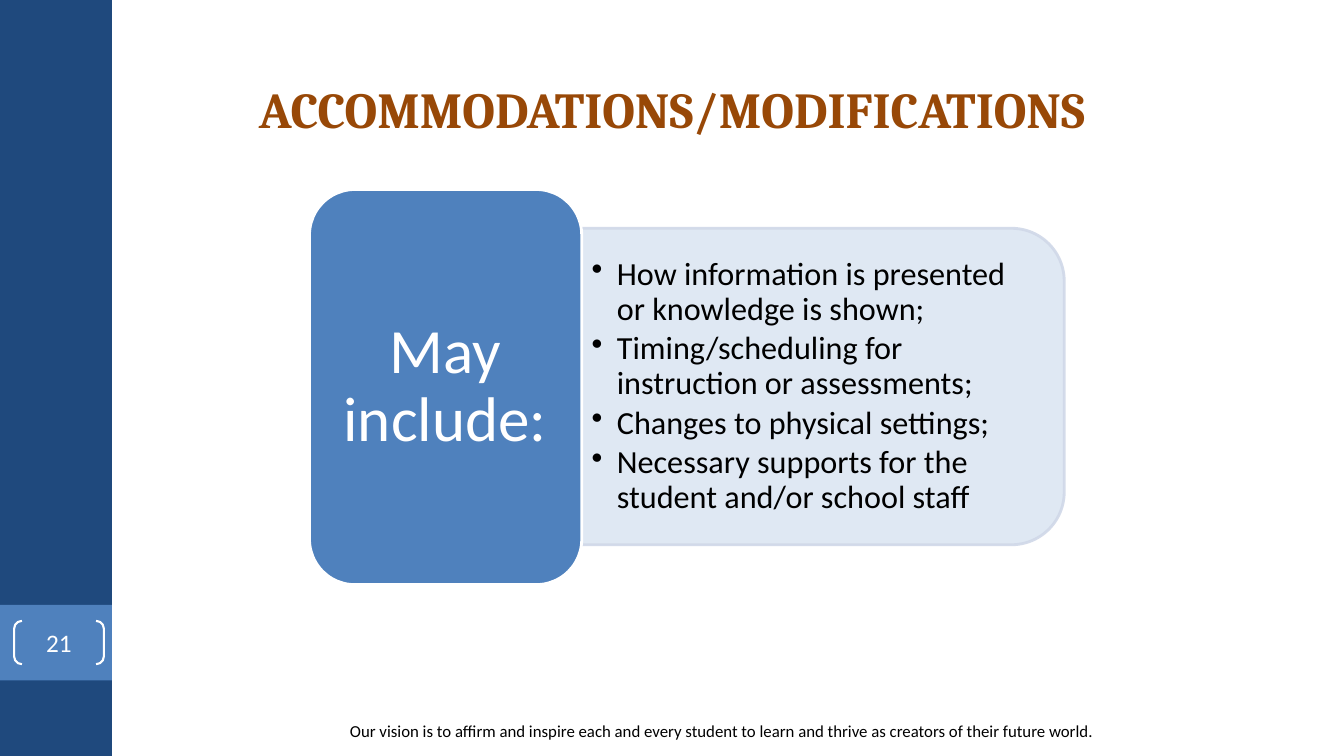
import pptx
import pptx.util
import pptx.dml.color
import pptx.enum.shapes
import pptx.enum.text
import pptx.oxml
import pptx.oxml.ns

RGB = pptx.dml.color.RGBColor
NAVY = RGB(0x1F, 0x49, 0x7D)
BLUE = RGB(0x4F, 0x81, 0xBD)
PALE = RGB(0xDC, 0xE6, 0xF2)
EDGE = RGB(0xD0, 0xD8, 0xE8)
RUST = RGB(0x98, 0x48, 0x07)
WHITE = RGB(0xFF, 0xFF, 0xFF)
BLACK = RGB(0x00, 0x00, 0x00)

KIND = pptx.enum.shapes.MSO_SHAPE
TOP = pptx.enum.text.MSO_ANCHOR.TOP
MID = pptx.enum.text.MSO_ANCHOR.MIDDLE
LEFT = pptx.enum.text.PP_ALIGN.LEFT
CENTER = pptx.enum.text.PP_ALIGN.CENTER
SCALE = 9144

ITEMS = [
    "How information is presented or knowledge is shown;",
    "Timing/scheduling for instruction or assessments;",
    "Changes to physical settings;",
    "Necessary supports for the student and/or school staff",
]


def px(num):
    return pptx.util.Emu(num * SCALE)


class Deck:
    font = "Calibri"
    head = "Cambria"

    def __init__(self):
        self.show = pptx.Presentation()
        self.show.slide_width = px(1333)
        self.show.slide_height = px(750)
        self.slide = self.show.slides.add_slide(self.show.slide_layouts[5])

    def title(self, text, box, size, color):
        shape = self.slide.shapes.title
        shape.left, shape.top, shape.width, shape.height = map(px, box)
        self.label(shape, [text], size, color, font=self.head, bold=True)

    def shape(self, kind, box, fill=None, line=None, width=2, turn=0, alpha=None):
        shape = self.slide.shapes.add_shape(kind, *map(px, box))
        shape.shadow.inherit = False
        shape.rotation = turn
        if fill is None:
            shape.fill.background()
        else:
            shape.fill.solid()
            shape.fill.fore_color.rgb = fill
        if line is None:
            shape.line.fill.background()
        else:
            shape.line.color.rgb = line
            shape.line.width = pptx.util.Pt(width)
        if alpha:
            for tint in shape.element.spPr.iter(pptx.oxml.ns.qn("a:srgbClr")):
                node = pptx.oxml.parse_xml(
                    f'<a:alpha {pptx.oxml.ns.nsdecls("a")} val="{alpha * 1000}"/>')
                tint.append(node)
        return shape

    def text(self, box, lines, size, color, **style):
        shape = self.slide.shapes.add_textbox(*map(px, box))
        self.label(shape, lines, size, color, **style)

    def label(self, shape, lines, size, color, font=None, bold=False,
              align=CENTER, anchor=TOP, pad=(10, 5), pack=1.0, gap=0, dot=False):
        frame = shape.text_frame
        frame.word_wrap = True
        frame.auto_size = pptx.enum.text.MSO_AUTO_SIZE.NONE
        frame.vertical_anchor = anchor
        frame.margin_left = frame.margin_right = px(pad[0])
        frame.margin_top = frame.margin_bottom = px(pad[1])
        frame.text = "\n".join(lines)
        for para in frame.paragraphs:
            para.alignment = align
            para.line_spacing = pack
            para.space_before = pptx.util.Pt(0)
            para.space_after = pptx.util.Pt(gap)
            if dot:
                self.bullet(para)
            for run in para.runs:
                run.font.name = font or self.font
                run.font.size = pptx.util.Pt(size)
                run.font.bold = bold
                run.font.color.rgb = color

    def bullet(self, para):
        props = para._p.get_or_add_pPr()
        props.set("marL", str(px(25)))
        props.set("indent", str(px(-25)))
        props.append(pptx.oxml.parse_xml(
            f'<a:buChar {pptx.oxml.ns.nsdecls("a")} char="•"/>'))


def main():
    deck = Deck()
    deck.shape(KIND.RECTANGLE, (0, 0, 111, 750), NAVY)
    deck.shape(KIND.RECTANGLE, (0, 600, 111, 75), BLUE)
    deck.text((102, 710, 1228, 48), [
        "Our vision is to affirm and inspire each and every student "
        "to learn and thrive as creators of their future world."], 12, BLACK)
    page = deck.shape(KIND.DOUBLE_BRACKET, (14, 616, 89, 43), line=WHITE, width=1.5)
    page.adjustments[0] = 0.18
    deck.label(page, ["21"], 18, WHITE, anchor=MID, pad=(0, 0))
    deck.title("ACCOMMODATIONS/MODIFICATIONS", (190, 72, 953, 71), 36, RUST)

    deck.shape(KIND.ROUND_2_SAME_RECTANGLE, (659, 144, 314, 479), PALE, EDGE,
               turn=90, alpha=90)
    deck.text((577, 242, 464, 283), ITEMS, 23, BLACK, align=LEFT, anchor=MID,
              pack=0.9, gap=3.5, dot=True)
    deck.shape(KIND.ROUNDED_RECTANGLE, (307, 188, 270, 392), BLUE, WHITE)
    deck.text((320, 201, 243, 366), ["May include:"], 45, WHITE, anchor=MID,
              pad=(19, 9), pack=0.9)
    deck.show.save("out.pptx")


if __name__ == "__main__":
    main()
